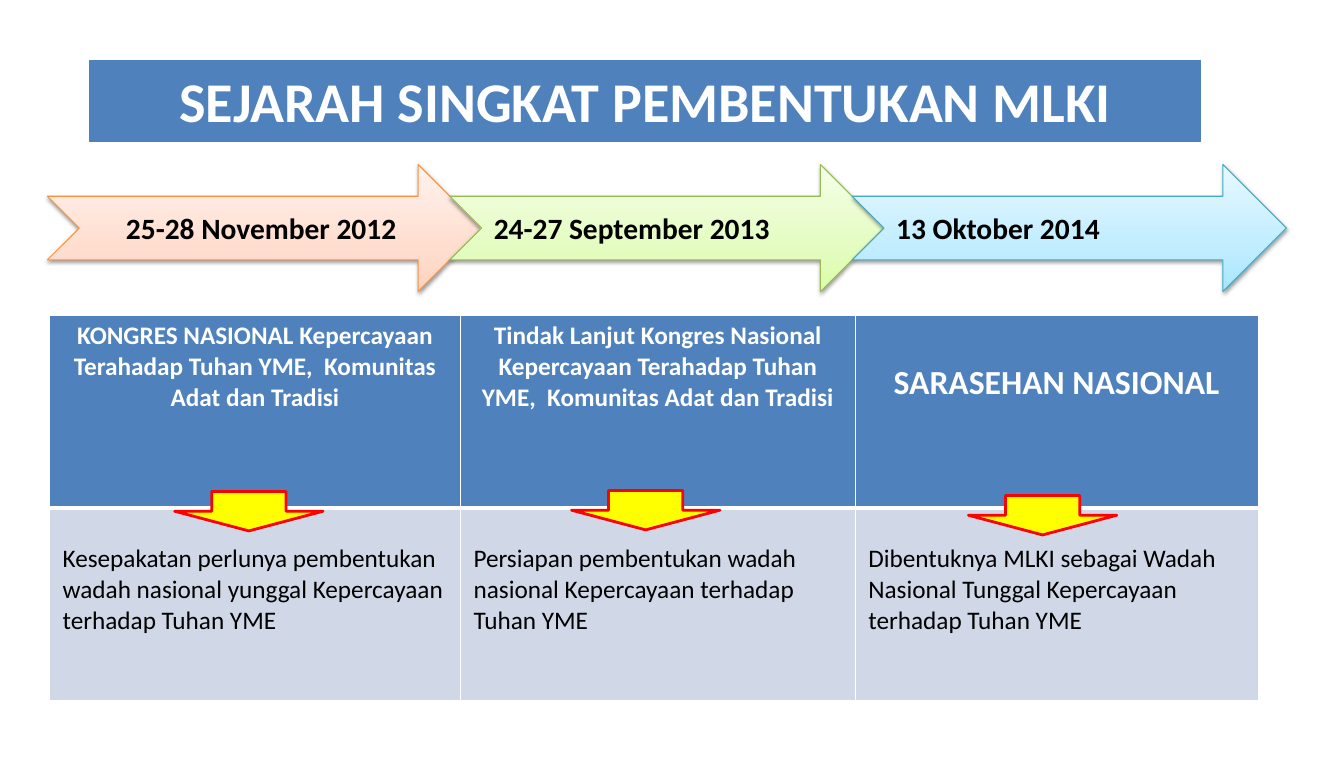
"""Build the MLKI history slide: a title, a timeline of arrows and a table of outcomes."""
from copy import deepcopy
from dataclasses import dataclass

from lxml import etree
from pptx import Presentation
from pptx.dml.color import RGBColor
from pptx.enum.shapes import MSO_SHAPE
from pptx.enum.text import MSO_ANCHOR, PP_ALIGN
from pptx.oxml.ns import qn
from pptx.util import Inches, Pt

RECTANGLE, DOWN_ARROW = MSO_SHAPE.RECTANGLE, MSO_SHAPE.DOWN_ARROW
NOTCHED_ARROW = MSO_SHAPE.NOTCHED_RIGHT_ARROW
LEFT, CENTER = PP_ALIGN.LEFT, PP_ALIGN.CENTER
TOP, MIDDLE = MSO_ANCHOR.TOP, MSO_ANCHOR.MIDDLE


@dataclass(frozen=True)
class Theme:
    """Hold the colours, font and type sizes."""
    font: str = "Calibri"
    title: int = 40
    event: int = 24
    date: int = 21
    body: int = 18
    blue: str = "4F81BD"
    pale: str = "D0D8E8"
    white: str = "FFFFFF"
    black: str = "000000"
    yellow: str = "FFFF00"
    red: str = "FF0000"


THEME = Theme()
SLIDE_SIZE = (13.31, 7.52)
TITLE = "SEJARAH SINGKAT PEMBENTUKAN MLKI"
TITLE_BOX = (0.89, 0.6, 11, 0.8)
DATES = [
    ("25-28 November 2012 ", CENTER, "F69240", ("FFD2BD", "FFDED0", "FFF2ED")),
    ("24-27 September 2013", LEFT, "98B955", ("DAFDA7", "E4FCC2", "F5FFE7")),
    ("13 Oktober 2014", LEFT, "46AAC5", ("A7E6FF", "C1EDFF", "E7F8FF")),
]
GRADIENT_POSITIONS = (0, 0.35, 1)
DATE_BOX, DATE_STEP = (0.47, 1.63, 4.3, 1.26), 3.985
EVENTS = [
    ("KONGRES NASIONAL Kepercayaan Terahadap Tuhan YME,  Komunitas Adat dan Tradisi", THEME.body, 0.05),
    ("Tindak Lanjut Kongres Nasional Kepercayaan Terahadap Tuhan YME,  Komunitas Adat dan Tradisi",
     THEME.body, 0.05),
    ("SARASEHAN NASIONAL", THEME.event, 0.46),
]
OUTCOMES = [
    "Kesepakatan perlunya pembentukan wadah nasional yunggal Kepercayaan terhadap Tuhan YME",
    "Persiapan pembentukan wadah nasional Kepercayaan terhadap Tuhan YME",
    "Dibentuknya MLKI sebagai Wadah Nasional Tunggal Kepercayaan terhadap Tuhan YME",
]
OUTCOME_TOP_MARGIN = 0.35
TABLE_ORIGIN = (0.49, 3.13)
COLUMN_WIDTHS, ROW_HEIGHT = (4.07, 3.91, 3.99), 1.905
POINTER_LEFT, POINTER_STEP, POINTER_SIZE = 1.73, 3.93, (1.47, 0.39)
POINTER_TOPS = (4.87, 4.86, 4.91)


def color(value):
    return RGBColor.from_string(value)


def apply(target, values):
    for name, value in values.items():
        setattr(target, name, value)


def write(frame, text, size, ink, align, bold=True):
    para = frame.paragraphs[0]
    para.alignment = align
    span = para.add_run()
    span.text = text
    apply(span.font, {"name": THEME.font, "size": Pt(size), "bold": bold})
    span.font.color.rgb = color(ink)


def add_box(page, kind, place, line, width, fill=None):
    box = page.shapes.add_shape(kind, *map(Inches, place))
    box.shadow.inherit = False
    if fill:
        box.fill.solid()
        box.fill.fore_color.rgb = color(fill)
    box.line.color.rgb = color(line)
    box.line.width = Pt(width)
    return box


def set_frame(box, anchor):
    side, edge = Inches(0.12), Inches(0.06)
    apply(box.text_frame, {"word_wrap": True, "vertical_anchor": anchor,
                           "margin_left": side, "margin_right": side,
                           "margin_top": edge, "margin_bottom": edge})


def set_gradient(box, shades):
    box.fill.gradient()
    box.fill.gradient_angle = 90
    stops = box._element.spPr.find(f".//{qn('a:gsLst')}")
    stops.append(deepcopy(stops[0]))
    for stop, shade, position in zip(box.fill.gradient_stops, shades, GRADIENT_POSITIONS):
        stop.color.rgb = color(shade)
        stop.position = position


def add_shadow(box):
    effects = box._element.spPr.find(qn("a:effectLst"))
    shadow = etree.SubElement(effects, qn("a:outerShdw"), blurRad=str(Pt(3.1)), dist=str(Pt(1.6)),
                              dir="5400000", rotWithShape="0")
    ink = etree.SubElement(shadow, qn("a:srgbClr"), val=THEME.black)
    etree.SubElement(ink, qn("a:alpha"), val="38000")


def set_borders(cell, widths):
    properties = cell._tc.get_or_add_tcPr()
    for side, width in zip("LRTB", widths):
        line = etree.SubElement(properties, qn(f"a:ln{side}"), w=str(Pt(width)))
        fill = etree.SubElement(line, qn("a:solidFill"))
        etree.SubElement(fill, qn("a:srgbClr"), val=THEME.white)


def fill_cell(cell, fill, borders, top_margin):
    set_borders(cell, borders)
    cell.fill.solid()
    cell.fill.fore_color.rgb = color(fill)
    apply(cell, {"margin_left": Inches(0.13), "margin_right": Inches(0.13),
                 "margin_top": Inches(top_margin), "margin_bottom": Inches(0.05),
                 "vertical_anchor": TOP})


def add_outcome_table(page):
    size = (sum(COLUMN_WIDTHS), 2 * ROW_HEIGHT)
    table = page.shapes.add_table(2, len(EVENTS), *map(Inches, TABLE_ORIGIN + size)).table
    apply(table, {"first_row": False, "horz_banding": False})
    for row in table.rows:
        row.height = Inches(ROW_HEIGHT)
    for index, width in enumerate(COLUMN_WIDTHS):
        table.columns[index].width = Inches(width)
        event, size, margin = EVENTS[index]
        head, body = table.cell(0, index), table.cell(1, index)
        fill_cell(head, THEME.blue, (1, 1, 1, 3), margin)
        write(head.text_frame, event, size, THEME.white, CENTER)
        fill_cell(body, THEME.pale, (1, 1, 3, 1), OUTCOME_TOP_MARGIN)
        write(body.text_frame, OUTCOMES[index], THEME.body, THEME.black, LEFT, bold=False)


def add_timeline(page):
    left, top, width, height = DATE_BOX
    for index, (date, align, line, shades) in enumerate(DATES):
        place = (left + index * DATE_STEP, top, width, height)
        arrow = add_box(page, NOTCHED_ARROW, place, line, 0.75)
        set_gradient(arrow, shades)
        add_shadow(arrow)
        set_frame(arrow, MIDDLE)
        write(arrow.text_frame, date, THEME.date, THEME.black, align)


def main():
    deck = Presentation()
    deck.slide_width, deck.slide_height = map(Inches, SLIDE_SIZE)
    page = deck.slides.add_slide(deck.slide_layouts[6])
    add_outcome_table(page)
    add_timeline(page)
    title = add_box(page, RECTANGLE, TITLE_BOX, THEME.blue, 0.75, THEME.blue)
    set_frame(title, TOP)
    write(title.text_frame, TITLE, THEME.title, THEME.white, CENTER)
    for index, top in enumerate(POINTER_TOPS):
        place = (POINTER_LEFT + index * POINTER_STEP, top, *POINTER_SIZE)
        add_box(page, DOWN_ARROW, place, THEME.red, 2, THEME.yellow)
    deck.save("out.pptx")


if __name__ == "__main__":
    main()
